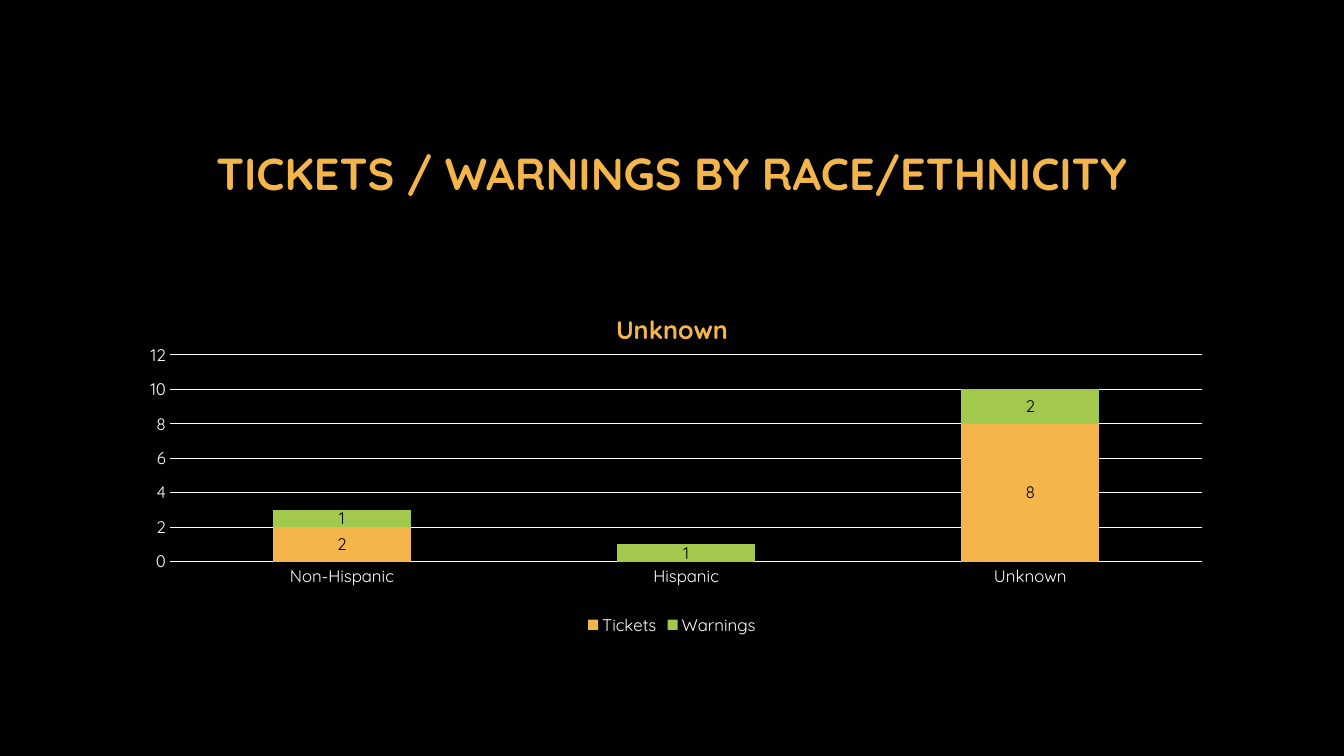
"""Build a slide with a stacked column chart of tickets and warnings by ethnicity."""
from lxml import etree
from pptx import Presentation
from pptx.chart.data import CategoryChartData
from pptx.dml.color import RGBColor as RGB
from pptx.enum.chart import XL_CHART_TYPE as CT, XL_LABEL_POSITION as LP
from pptx.enum.chart import XL_LEGEND_POSITION as LegendPos, XL_TICK_MARK as Tick
from pptx.enum.text import MSO_ANCHOR as Anchor, PP_ALIGN as Align
from pptx.oxml.ns import qn
from pptx.util import Cm, Pt

COLORS = {"black": "000000", "white": "FFFFFF", "orange": "F4B54B", "green": "A2C84E"}
FONT = "Quicksand"


def rgb(name):
    return RGB.from_string(COLORS[name])


def set_font(font, size, color, bold=False):
    font.name, font.size, font.bold = FONT, Pt(size), bold
    font.color.rgb = rgb(color)


prs = Presentation()
prs.slide_width, prs.slide_height = Cm(33.87), Cm(19.05)
s = prs.slides.add_slide(prs.slide_layouts[6])
s.background.fill.solid()
s.background.fill.fore_color.rgb = rgb("black")

left, width = Cm(3.18), Cm(27.51)
tf = s.shapes.add_textbox(left, Cm(1.7), width, Cm(5.28)).text_frame
tf.word_wrap = True
tf.vertical_anchor = Anchor.MIDDLE
p = tf.paragraphs[0]
p.text = "TICKETS / WARNINGS BY RACE/ETHNICITY"
p.alignment = Align.CENTER
set_font(p.font, 32, "orange", True)

data = CategoryChartData()
data.categories = ["Non-Hispanic", "Hispanic", "Unknown"]
data.add_series("Tickets", (2, None, 8))
data.add_series("Warnings", (1, 1, 2))
chart = s.shapes.add_chart(CT.COLUMN_STACKED, left, Cm(7.42), width, Cm(8.69), data).chart
set_font(chart.font, 10, "white")

chart.has_title = True
chart.chart_title.include_in_layout = False
p = chart.chart_title.text_frame.paragraphs[0]
p.text = "Unknown"
set_font(p.font, 18, "orange", True)

chart.has_legend = True
chart.legend.position = LegendPos.BOTTOM
chart.legend.include_in_layout = False
set_font(chart.legend.font, 12, "white")

for axis in (chart.category_axis, chart.value_axis):
    axis.major_tick_mark = axis.minor_tick_mark = Tick.NONE
    axis.format.line.fill.background()
    set_font(axis.tick_labels.font, 12, "white")
scale = chart.value_axis
scale.minimum_scale, scale.maximum_scale, scale.major_unit = 0, 12, 2
grid = scale.major_gridlines.format.line
grid.width = Pt(0.75)
grid.color.rgb = rgb("white")

plot = chart.plots[0]
plot.gap_width, plot.overlap, plot.vary_by_categories = 150, 100, False
for series, color in zip(plot.series, ("orange", "green")):
    series.format.fill.solid()
    series.format.fill.fore_color.rgb = rgb(color)
    labels = series.data_labels
    labels.show_value = True
    labels.position = LP.CENTER
    set_font(labels.font, 12, "black")

area = chart.element.find(".//" + qn("c:plotArea"))
for old in area.findall(qn("c:layout")):
    area.remove(old)
layout = etree.Element(qn("c:layout"))
manual = etree.SubElement(layout, qn("c:manualLayout"))
for tag, val in (("layoutTarget", "inner"), ("xMode", "edge"), ("yMode", "edge"),
                 ("x", "0.04"), ("y", "0.175"), ("w", "0.946"), ("h", "0.6")):
    etree.SubElement(manual, qn("c:" + tag)).set("val", val)
area.insert(0, layout)

prs.save("out.pptx")
